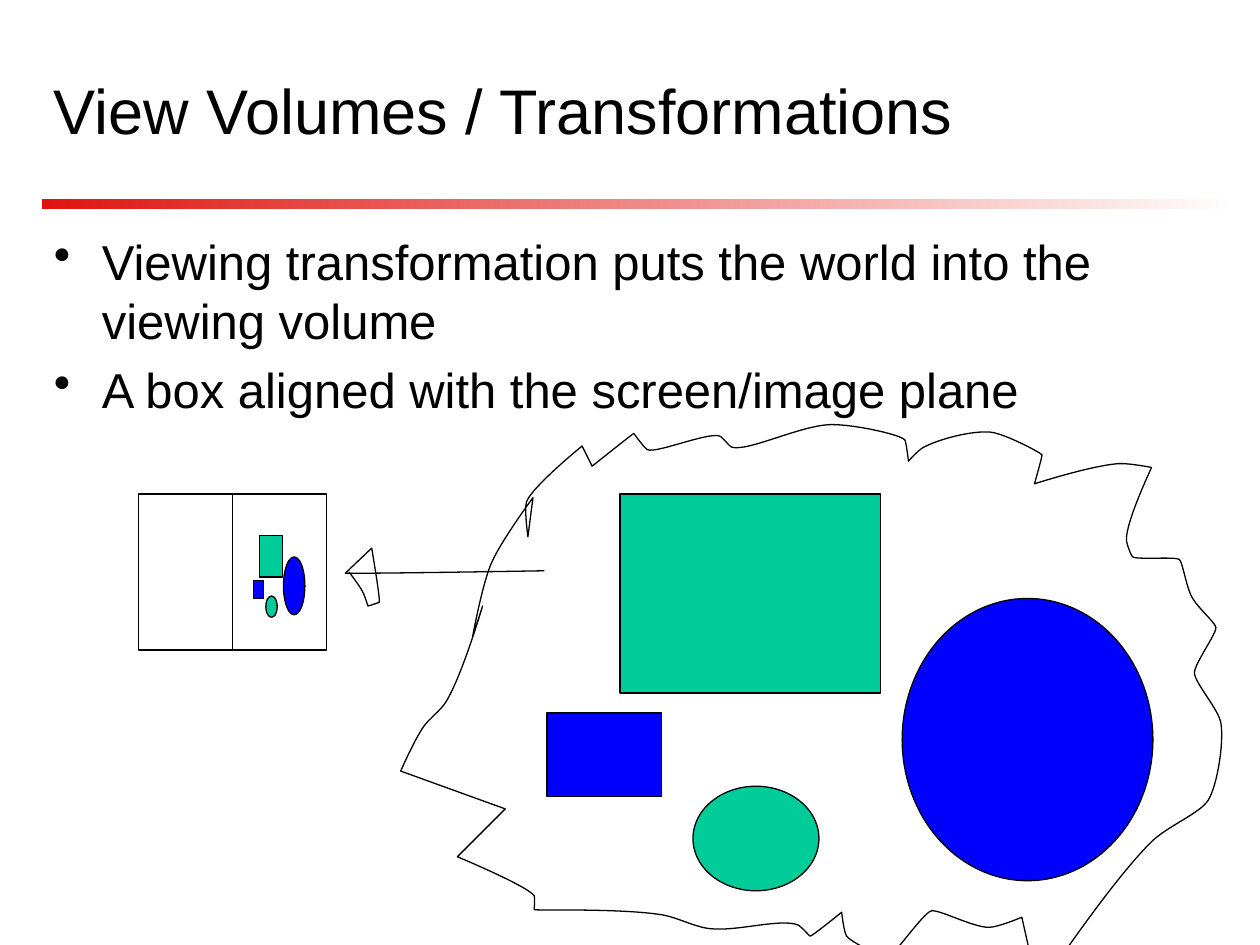
from dataclasses import dataclass

from lxml import etree
from pptx import Presentation
from pptx.dml.color import RGBColor
from pptx.enum.shapes import MSO_CONNECTOR, MSO_SHAPE
from pptx.enum.text import MSO_ANCHOR
from pptx.oxml.ns import qn
from pptx.util import Inches, Pt

RECT, OVAL = MSO_SHAPE.RECTANGLE, MSO_SHAPE.OVAL
STRAIGHT = MSO_CONNECTOR.STRAIGHT
MIDDLE = MSO_ANCHOR.MIDDLE


@dataclass(frozen=True)
class Theme:
    font: str = "Arial"
    head: int = 36
    body: int = 28
    gap: float = 5.6
    line: float = 0.75
    ink: RGBColor = RGBColor(0, 0, 0)
    paper: RGBColor = RGBColor(255, 255, 255)
    red: RGBColor = RGBColor(0xDF, 0x14, 0x0F)
    green: RGBColor = RGBColor(0, 0xCC, 0x99)
    blue: RGBColor = RGBColor(0, 0, 255)


THEME = Theme()

CLOUD = (
    (2.81, 0.55), (3.6, 0.37), (4.18, 0.49), (4.21, 0.66), (4.33, 0.55),
    (4.86, 0.43), (5.27, 0.61), (5.21, 0.84), (5.88, 0.68), (6.14, 0.71),
    (5.94, 1.28), (5.99, 1.42), (6.36, 1.44), (6.46, 1.74), (6.65, 1.98),
    (6.48, 2.34), (6.69, 2.74), (6.59, 3.35), (6.14, 3.68), (5.24, 4.86),
    (5.11, 4.28), (4.85, 4.36), (4.39, 4.23), (4.05, 4.6), (3.72, 4.43),
    (3.68, 4.24), (3.43, 4.43), (3.33, 4.34), (2.63, 4.37), (2.25, 4.26),
    (1.24, 4.22), (1.24, 4.11), (0.63, 3.8), (1.01, 3.42), (0.18, 3.12),
    (0.36, 2.77), (0.54, 2.57), (0.83, 1.81), (0.75, 2.06), (0.9, 1.47),
    (1.23, 0.95), (1.19, 1.26), (1.18, 0.98), (1.62, 0.54), (1.7, 0.7),
    (2.03, 0.44), (2.14, 0.57), (2.71, 0.46),
)
ARROW = ((1.62, 0.23), (0.18, 0.25), (0.04, 0.25), (0.25, 0.05),
         (0.31, 0.48), (0.22, 0.51), (0.18, 0.4), (0.07, 0.24))


def edge(item):
    item.shadow.inherit = False
    item.line.color.rgb = THEME.ink
    item.line.width = Pt(THEME.line)


def block(shapes, kind, box, fill=None):
    item = shapes.add_shape(kind, *map(Inches, box))
    edge(item)
    if fill is None:
        item.fill.background()
    else:
        item.fill.solid()
        item.fill.fore_color.rgb = fill
    return item


def scatter(shapes, left, top, parts):
    for kind, fill, x, y, wide, high in parts:
        block(shapes, kind, (left + x, top + y, wide, high), fill)


def lean(last, spot, after):
    if last == spot or spot == after:
        return 0
    way, out = spot - last, after - spot
    way, out = way / abs(way), out / abs(out)
    turn = (way * out.conjugate()).real
    return (way + out) / 2 * max(0, turn)


def bend(dots, close):
    dots = [complex(*dot) for dot in dots]
    if close:
        ring = [dots[-1], *dots, *dots[:2]]
    else:
        ring = [dots[0], *dots, dots[-1]]
    leans = [lean(*trio) for trio in zip(ring, ring[1:], ring[2:])]
    path = ring[1:-1]
    spots = path[:1]
    for start, end, out, into in zip(path, path[1:], leans, leans[1:]):
        reach = abs(end - start) / 3
        spots += [start + out * reach, end - into * reach, end]
    return spots


def curve(shapes, left, top, dots, close):
    spots = [(Inches(left + spot.real), Inches(top + spot.imag))
             for spot in bend(dots, close)]
    pen = shapes.build_freeform(*spots[0])
    pen.add_line_segments(spots[1:], close=close)
    item = pen.convert_to_shape()
    edge(item)
    item.fill.background()
    steps = list(item._element.iter(qn("a:lnTo")))
    for first, *rest in zip(steps[::3], steps[1::3], steps[2::3]):
        first.tag = qn("a:cubicBezTo")
        for step in rest:
            first.append(step[0])
            step.getparent().remove(step)


def write(shapes, box, lines):
    frame = shapes.add_textbox(*map(Inches, box)).text_frame
    frame.word_wrap = True
    frame.text = "\n".join(lines)
    return frame


def style(frame, size):
    for para in frame.paragraphs:
        font = para.runs[0].font
        font.name = THEME.font
        font.size = Pt(size)
        font.color.rgb = THEME.ink


def header(shapes, left, top, wide, high):
    frame = write(shapes, (left, top, 8.33, 1.08), ["View Volumes / Transformations"])
    frame.vertical_anchor = MIDDLE
    style(frame, THEME.head)
    rule = shapes.add_shape(RECT, *map(Inches, (left, top + high - 0.08, wide, 0.08)))
    rule.shadow.inherit = False
    rule.line.fill.background()
    rule.fill.gradient()
    rule.fill.gradient_angle = 0
    for stop, tone, spot in zip(rule.fill.gradient_stops, (THEME.red, THEME.paper), (0, 1)):
        stop.color.rgb = tone
        stop.position = spot


def points(shapes, box, lines):
    frame = write(shapes, box, lines)
    frame.margin_top = Inches(0.09)
    for num, para in enumerate(frame.paragraphs):
        props = para._p.get_or_add_pPr()
        props.set("marL", str(Inches(0.38)))
        props.set("indent", str(-Inches(0.38)))
        etree.SubElement(props, qn("a:buChar")).set("char", "•")
        if num:
            para.space_before = Pt(THEME.gap)
    style(frame, THEME.body)


def volume(shapes, left, top, wide, high):
    frame = block(shapes, RECT, (left, top, wide, high))
    split = shapes.add_connector(STRAIGHT, 0, 0, 0, 0)
    split.begin_connect(frame, 0)
    split.end_connect(frame, 2)
    split.line.color.rgb = THEME.ink
    split.line.width = Pt(THEME.line)
    etree.SubElement(split._element.spPr, qn("a:effectLst"))
    scatter(shapes.add_group_shape().shapes, left, top, (
        (RECT, THEME.green, 0.96, 0.33, 0.18, 0.33),
        (OVAL, THEME.blue, 1.15, 0.5, 0.17, 0.46),
        (OVAL, THEME.green, 1.01, 0.81, 0.09, 0.17),
        (RECT, THEME.blue, 0.91, 0.69, 0.08, 0.14)))


def world(shapes, left, top):
    scatter(shapes, left, top, (
        (RECT, THEME.green, 1.92, 0.92, 2.07, 1.58),
        (OVAL, THEME.blue, 4.16, 1.75, 1.99, 2.24),
        (OVAL, THEME.green, 2.5, 3.24, 1, 0.83),
        (RECT, THEME.blue, 1.34, 2.66, 0.91, 0.66)))
    curve(shapes, left, top, CLOUD, True)


def main():
    deck = Presentation()
    deck.slide_width, deck.slide_height = Inches(10), Inches(7.5)
    shapes = deck.slides.add_slide(deck.slide_layouts[6]).shapes
    header(shapes, 0.33, 0.33, 9.5, 1.33)
    points(shapes, (0.33, 1.75, 9.42, 5.58), (
        "Viewing transformation puts the world into the viewing volume",
        "A box aligned with the screen/image plane"))
    volume(shapes, 1.1, 3.92, 1.49, 1.24)
    world(shapes, 3, 3)
    curve(shapes, 2.7, 4.3, ARROW, False)
    deck.save("out.pptx")


if __name__ == "__main__":
    main()
